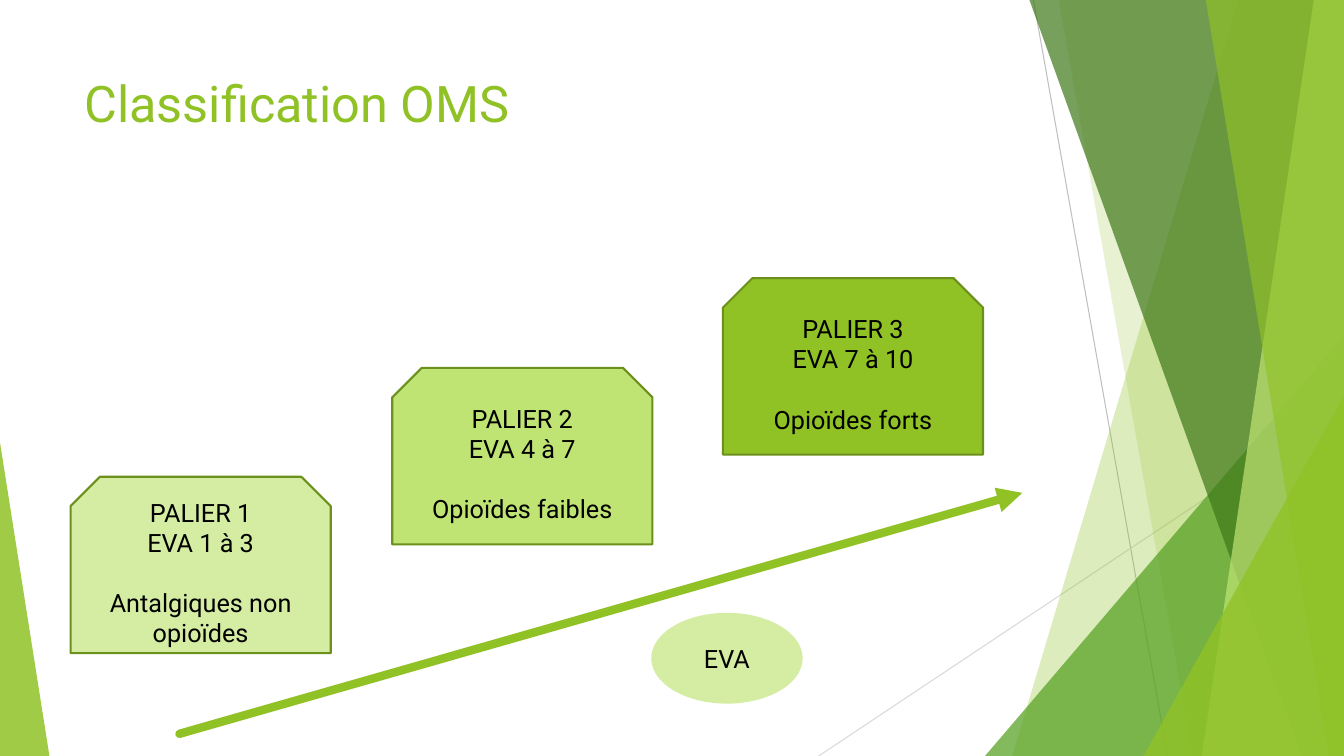
from lxml import etree
from pptx import Presentation
from pptx.dml.color import RGBColor
from pptx.enum.shapes import MSO_CONNECTOR, MSO_SHAPE
from pptx.enum.text import MSO_ANCHOR, PP_ALIGN
from pptx.oxml.ns import qn
from pptx.util import Inches, Pt

STRAIGHT = MSO_CONNECTOR.STRAIGHT
TRIANGLE = MSO_SHAPE.ISOSCELES_TRIANGLE
SNIPPED = MSO_SHAPE.SNIP_2_SAME_RECTANGLE
OVAL = MSO_SHAPE.OVAL
MIDDLE = MSO_ANCHOR.MIDDLE
CENTER = PP_ALIGN.CENTER

FONT = "Roboto"
GREEN = RGBColor(0x90, 0xC2, 0x26)
LIGHT = RGBColor(0xC0, 0xE4, 0x74)
PALE = RGBColor(0xD5, 0xED, 0xA2)
MID = RGBColor(0x54, 0xA0, 0x21)
DARK = RGBColor(0x3F, 0x78, 0x19)
OUTLINE = RGBColor(0x6B, 0x90, 0x1C)
GRAY = RGBColor(0xBF, 0xBF, 0xBF)
LIGHT_GRAY = RGBColor(0xD9, 0xD9, 0xD9)
BLACK = RGBColor(0, 0, 0)

W, H = 13.33, 7.5
TITLE = "Classification OMS"
STEP_SIZE = (2.58, 1.75)
STEPS = [
    (0.7, 4.73, PALE, ["PALIER 1", "EVA 1 à 3", "Antalgiques non opioïdes"]),
    (3.89, 3.65, LIGHT, ["PALIER 2", "EVA 4 à 7", "Opioïdes faibles"]),
    (7.17, 2.76, GREEN, ["PALIER 3", "EVA 7 à 10", "Opioïdes forts"]),
]
THIN_LINES = [
    ((10.25, 0), (11.58, H), GRAY),
    ((W, 4.03), (8.12, H), LIGHT_GRAY),
]
# fmt: off
FACETS = [
    ("band", (12.28, 10.04), GREEN, 30),
    ("band", (10.5, 11.83), GREEN, 20),
    ("triangle", (9.77, 3.33, 3.56, 1), MID, 72),
    ("band", (10.21, 12.91), DARK, 70),
    ("band", (13.03, 11.92), LIGHT, 70),
    ("band", (11.96, 13.18), GREEN, 65),
    ("triangle", (11.34, 3.93, 1.99, 1), GREEN, 80),
    ("triangle", (0, 4.39, 0.49, 0), GREEN, 85),
]
# fmt: on

prs = Presentation()
prs.slide_width, prs.slide_height = Inches(W), Inches(H)
s = prs.slides.add_slide(prs.slide_layouts[6])


def add_line(start, end, color, width):
    c = s.shapes.add_connector(STRAIGHT, *map(Inches, start + end))
    c.line.color.rgb = color
    c.line.width = Pt(width)
    etree.SubElement(c._element.spPr, qn("a:effectLst"))
    return c


def paint(sp, color, line=None, alpha=None):
    sp.shadow.inherit = False
    sp.fill.solid()
    sp.fill.fore_color.rgb = color
    if line is None:
        sp.line.fill.background()
    else:
        sp.line.color.rgb = line
        sp.line.width = Pt(1.5)
    if alpha is not None:
        clr = sp._element.spPr.find(qn("a:solidFill"))[0]
        etree.SubElement(clr, qn("a:alpha"), val=str(alpha * 1000))


def write(tf, lines, size, color, align=None):
    tf.word_wrap = True
    tf.text = "\n".join(lines)
    for p in tf.paragraphs:
        p.alignment = align
        font = p.runs[0].font
        font.name, font.size, font.color.rgb = FONT, Pt(size), color


def add_label(kind, box, lines, color, line):
    sp = s.shapes.add_shape(kind, *map(Inches, box))
    paint(sp, color, line)
    tf = sp.text_frame
    tf.vertical_anchor = MIDDLE
    write(tf, lines, 18, BLACK, CENTER)
    return tf


for start, end, color in THIN_LINES:
    add_line(start, end, color, 0.75)

for kind, place, color, alpha in FACETS:
    if kind == "band":
        top, bottom = place
        corners = [(W, 0), (W, H), (bottom, H)]
        fb = s.shapes.build_freeform(Inches(top), 0)
        fb.add_line_segments([(Inches(x), Inches(y)) for x, y in corners])
        sp = fb.convert_to_shape()
    else:
        x, y, width, apex = place
        sp = s.shapes.add_shape(TRIANGLE, *map(Inches, (x, y, width, H - y)))
        sp.adjustments[0] = apex
    paint(sp, color, alpha=alpha)

title = s.shapes.add_textbox(*map(Inches, (0.74, 0.67, 9.4, 1.44)))
write(title.text_frame, [TITLE], 36, GREEN)

for x, y, color, lines in STEPS:
    tf = add_label(SNIPPED, (x, y, *STEP_SIZE), lines, color, OUTLINE)
    tf.paragraphs[-1].space_before = Pt(21.5)

arrow = add_line((1.78, 7.28), (10.14, 4.89), GREEN, 6)
ln = arrow.line._get_or_add_ln()
ln.set("cap", "rnd")
etree.SubElement(ln, qn("a:tailEnd"), type="triangle")

add_label(OVAL, (6.47, 6.09, 1.48, 0.88), ["EVA"], PALE, PALE)

prs.save("out.pptx")
